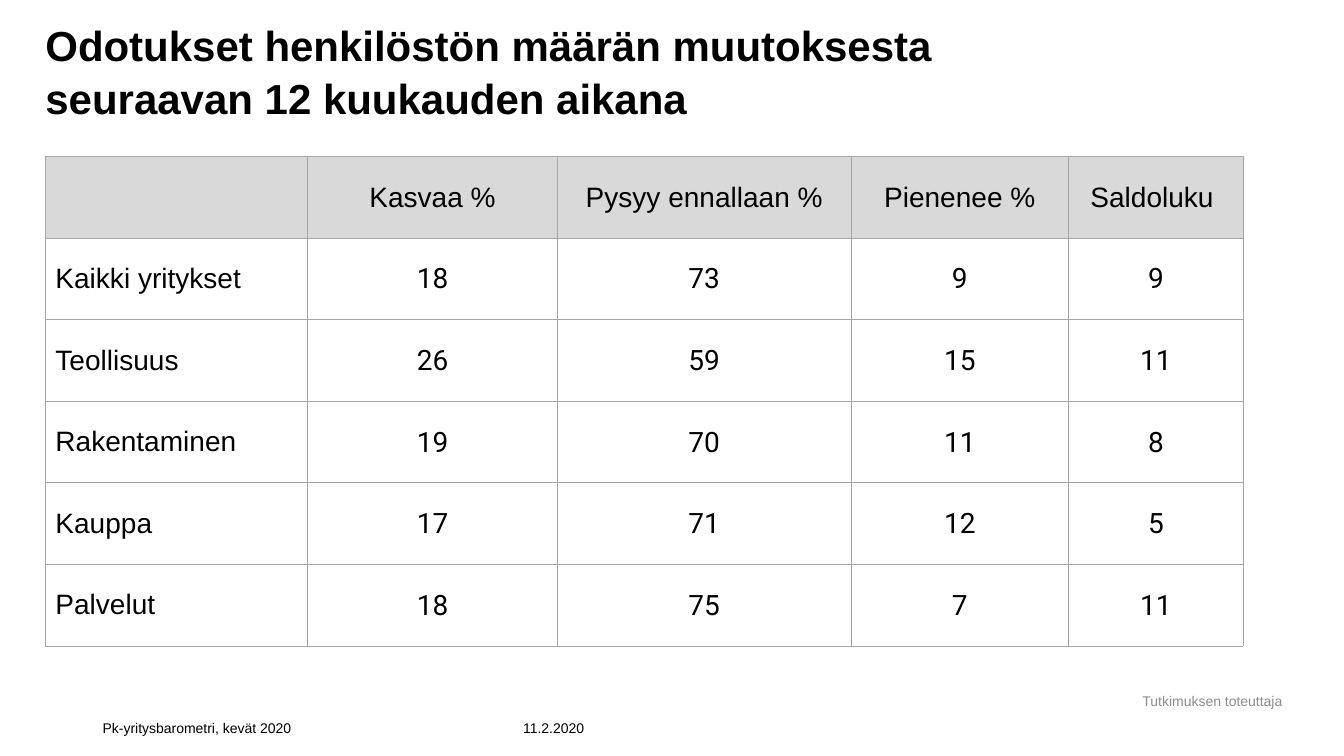
from lxml import etree
from pptx import Presentation
from pptx import util as u
from pptx.dml.color import RGBColor
from pptx.enum import text
from pptx.oxml.ns import qn

PX = 9144  # 100 px to the inch
SLIDE_SIZE = (1333, 750)

TITLE = "Odotukset henkilöstön määrän muutoksesta \vseuraavan 12 kuukauden aikana"
TITLE_BOX = (45, 0, 1230, 122)

HEADERS = ["", "Kasvaa %", "Pysyy ennallaan %", "Pienenee %", "Saldoluku "]
ROWS = [
    ("Kaikki yritykset", 18, 73, 9, 9),
    ("Teollisuus", 26, 59, 15, 11),
    ("Rakentaminen", 19, 70, 11, 8),
    ("Kauppa", 17, 71, 12, 5),
    ("Palvelut", 18, 75, 7, 11),
]
TABLE_LEFT, TABLE_TOP = 45, 155
COLUMN_WIDTHS = [260, 248, 291, 216, 173]
ROW_HEIGHT = 81
BORDER_COLOUR = "A6A6A6"

LEFT, CENTRE = text.PP_ALIGN.LEFT, text.PP_ALIGN.CENTER
MIDDLE, BOTTOM = text.MSO_ANCHOR.MIDDLE, text.MSO_ANCHOR.BOTTOM
FOOTERS = [
    ("Tutkimuksen toteuttaja", (1116, 682, 173, 26), "8C8C8C", CENTRE, MIDDLE),
    ("11.2.2020", (509, 700, 87, 35), "000000", LEFT, BOTTOM),
    ("Pk-yritysbarometri, kevät 2020", (92, 700, 417, 35), "000000", LEFT, BOTTOM),
]


def px(length):
    return u.Emu(length * PX)


def colour(value):
    return RGBColor.from_string(value)


def set_attributes(target, values):
    for name, value in values.items():
        setattr(target, name, value)


def format_paragraph(paragraph, size, hex_colour="000000", font="Arial",
                     bold=False, align=LEFT):
    paragraph.alignment = align
    set_attributes(paragraph.font, {"size": u.Pt(size), "name": font, "bold": bold})
    paragraph.font.color.rgb = colour(hex_colour)


def add_borders(cell):
    properties = cell._tc.get_or_add_tcPr()
    for side in ("a:lnL", "a:lnR", "a:lnT", "a:lnB"):
        line = etree.SubElement(properties, qn(side), w=str(u.Pt(0.5)))
        fill = etree.SubElement(line, qn("a:solidFill"))
        etree.SubElement(fill, qn("a:srgbClr"), val=BORDER_COLOUR)


def add_title(slide):
    title = slide.shapes.title
    set_attributes(title, dict(zip(("left", "top", "width", "height"),
                                   map(px, TITLE_BOX))))
    frame = title.text_frame
    frame.text = TITLE
    set_attributes(frame, {
        "margin_left": 0, "margin_top": 0, "margin_right": 0, "margin_bottom": 0,
        "vertical_anchor": BOTTOM, "word_wrap": True,
        "auto_size": text.MSO_AUTO_SIZE.NONE,
    })
    format_paragraph(frame.paragraphs[0], 30, bold=True)
    frame.paragraphs[0].line_spacing = 1.05


def add_barometer_table(slide):
    grid = [HEADERS, *ROWS]
    frame = slide.shapes.add_table(
        len(grid), len(HEADERS), px(TABLE_LEFT), px(TABLE_TOP),
        px(sum(COLUMN_WIDTHS)), px(ROW_HEIGHT * len(grid)))
    table = frame.table
    set_attributes(table, {"first_row": False, "horz_banding": False})
    for column, width in zip(table.columns, COLUMN_WIDTHS):
        column.width = px(width)
    for row_index, values in enumerate(grid):
        table.rows[row_index].height = px(ROW_HEIGHT)
        for column_index, value in enumerate(values):
            cell = table.cell(row_index, column_index)
            is_header, is_label = row_index == 0, column_index == 0
            cell.text = str(value)
            cell.vertical_anchor = MIDDLE
            if not is_label:
                set_attributes(cell, {"margin_left": px(1), "margin_top": px(1),
                                      "margin_right": px(1), "margin_bottom": 0})
            format_paragraph(cell.text_frame.paragraphs[0], 20,
                             font="Arial" if is_header or is_label else "Roboto",
                             align=LEFT if is_label else CENTRE)
            add_borders(cell)
            cell.fill.solid()
            cell.fill.fore_color.rgb = colour("D9D9D9" if is_header else "FFFFFF")


def add_footer(slide, words, box, hex_colour, align, anchor):
    frame = slide.shapes.add_textbox(*map(px, box)).text_frame
    set_attributes(frame, {"text": words, "word_wrap": True, "vertical_anchor": anchor})
    format_paragraph(frame.paragraphs[0], 10, hex_colour, align=align)


def main():
    presentation = Presentation()
    presentation.slide_width, presentation.slide_height = map(px, SLIDE_SIZE)
    slide = presentation.slides.add_slide(presentation.slide_layouts[5])
    add_title(slide)
    add_barometer_table(slide)
    for footer in FOOTERS:
        add_footer(slide, *footer)
    presentation.save("out.pptx")


if __name__ == "__main__":
    main()
